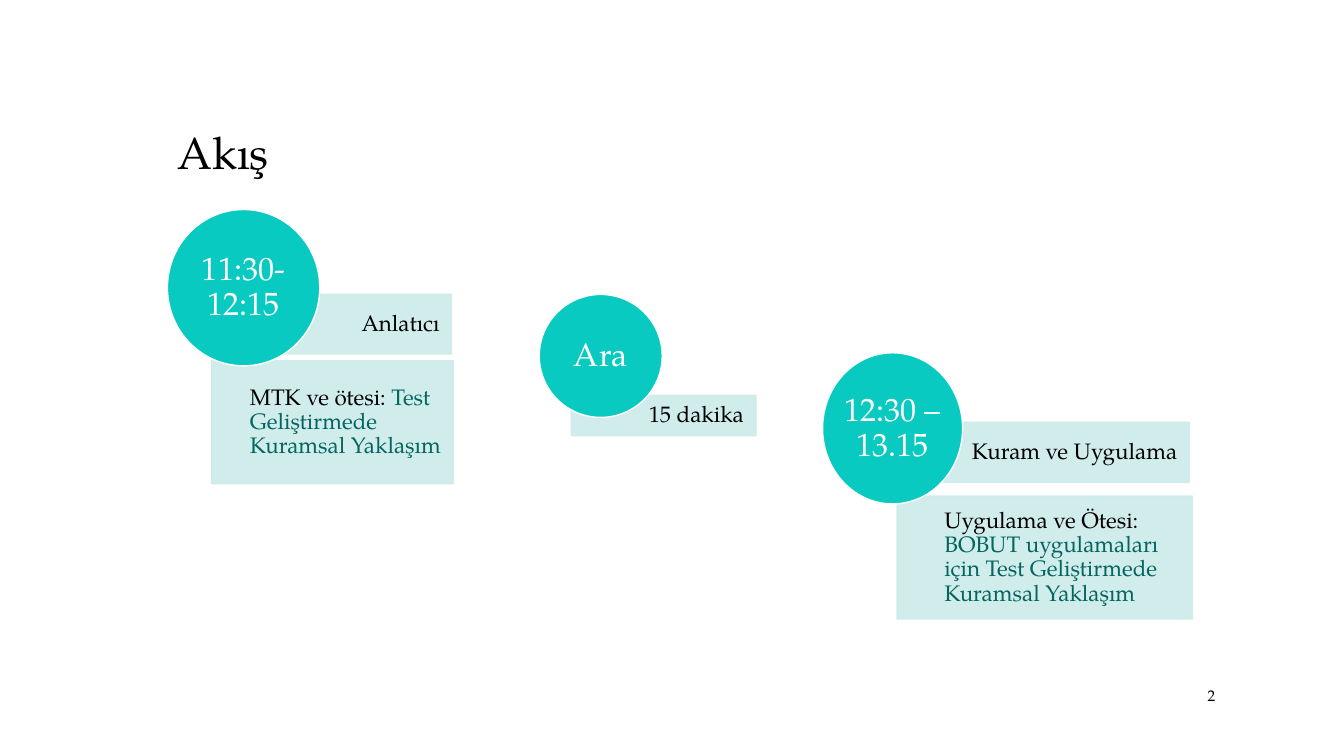
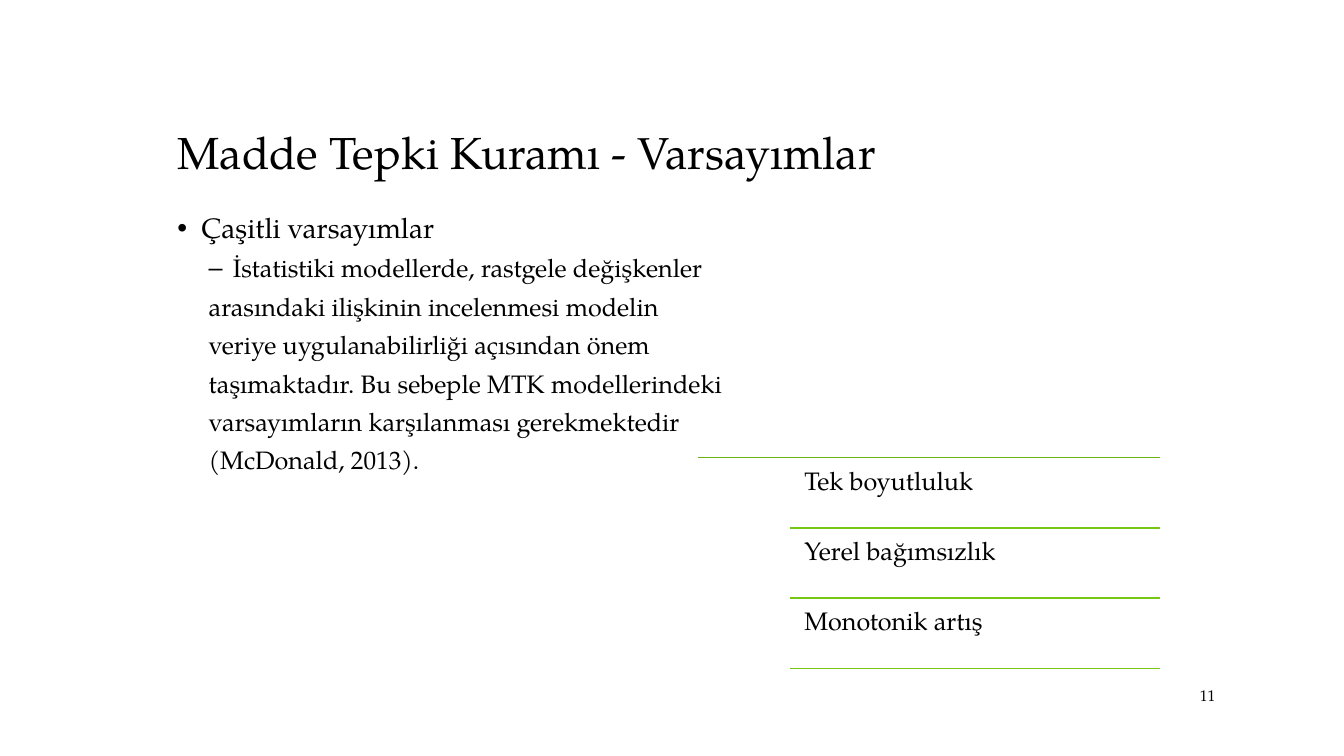
from dataclasses import dataclass

from lxml import etree
from pptx import Presentation
from pptx import util as u
from pptx.dml import color
from pptx.enum import shapes, text
from pptx.oxml import ns

FONT = "TeX Gyre Pagella"
HUES = {
    "ink": "000000",
    "paper": "FFFFFF",
    "teal": "08CAC1",
    "mint": "CCECE9",
    "deep": "046561",
    "moss": "6BB512",
    "lime": "76C714",
}
LEFT = text.PP_ALIGN.LEFT
RIGHT = text.PP_ALIGN.RIGHT
MID = text.PP_ALIGN.CENTER
Area = tuple[float, float, float, float]


@dataclass
class Box:
    area: Area
    pad: float
    lead: str
    tail: str = ""


@dataclass
class Stop:
    time: str
    disc: Area
    boxes: list[Box]


@dataclass
class Rule:
    left: float
    hue: str
    label: str = ""


STOPS = [
    Stop("11:30- 12:15", (4.22, 5.28, 3.84, 3.94), [
        Box((5.33, 9.09, 6.1, 3.1), 0.97, "MTK ve ötesi: ",
            "Test Geliştirmede Kuramsal Yaklaşım"),
        Box((5.49, 7.42, 5.89, 1.5), 0.97, "Anlatıcı"),
    ]),
    Stop("Ara", (13.59, 7.42, 3.1, 3.1), [
        Box((14.4, 9.96, 4.65, 1.02), 0.74, "15 dakika"),
    ]),
    Stop("12:30 – 13.15", (20.73, 8.89, 3.53, 3.81), [
        Box((22.61, 12.5, 7.44, 3.1), 1.19, "Uygulama ve Ötesi: ",
            "BOBUT uygulamaları için Test Geliştirmede Kuramsal Yaklaşım"),
        Box((22.63, 10.64, 7.34, 1.52), 1.19, "Kuram ve Uygulama"),
    ]),
]
NOTES = [
    "İstatistiki modellerde, rastgele değişkenler",
    "arasındaki ilişkinin incelenmesi modelin",
    "veriye uygulanabilirliği açısından önem",
    "taşımaktadır. Bu sebeple MTK modellerindeki",
    "varsayımların karşılanması gerekmektedir",
    "(McDonald, 2013).",
]
RULES = [
    Rule(17.6, "moss", "Tek boyutluluk"),
    Rule(19.91, "lime", "Yerel bağımsızlık"),
    Rule(19.91, "lime", "Monotonik artış"),
    Rule(19.91, "lime"),
]
RULE_TOP, RULE_STEP, RULE_END = 11.53, 1.77, 29.24


def rgb(hue: str) -> color.RGBColor:
    return color.RGBColor.from_string(HUES[hue])


def cms(area: Area) -> list[u.Cm]:
    return [u.Cm(n) for n in area]


def place(item, area: Area) -> None:
    item.left, item.top, item.width, item.height = cms(area)


def style(para, size: float, hue: str = "ink", align=LEFT, gap: float = 0.9) -> None:
    para.alignment = align
    para.line_spacing = gap
    para.font.name = FONT
    para.font.size = u.Pt(size)
    para.font.color.rgb = rgb(hue)


def frame(item, pads: Area, anchor):
    tf = item.text_frame
    tf.word_wrap = True
    tf.auto_size = text.MSO_AUTO_SIZE.NONE
    tf.vertical_anchor = anchor
    tf.margin_left, tf.margin_top, tf.margin_right, tf.margin_bottom = cms(pads)
    return tf


def fade(item, share: int) -> None:
    for tone in item._element.spPr.iter(ns.qn("a:srgbClr")):
        etree.SubElement(tone, ns.qn("a:alpha"), val=str(share * 1000))


def solid(slide, kind, area: Area, fill: str, edge: str):
    item = slide.shapes.add_shape(kind, *cms(area))
    item.shadow.inherit = False
    item.fill.solid()
    item.fill.fore_color.rgb = rgb(fill)
    item.line.color.rgb = rgb(edge)
    item.line.width = u.Pt(1)
    return item


def add_box(slide, box: Box) -> None:
    item = solid(slide, shapes.MSO_SHAPE.RECTANGLE, box.area, "mint", "mint")
    fade(item, 90)
    tf = frame(item, (box.pad, 0.3, 0.3, 0.3), text.MSO_ANCHOR.MIDDLE)
    para = tf.paragraphs[0]
    para.add_run().text = box.lead
    style(para, 16, align=LEFT if box.tail else RIGHT)
    if box.tail:
        run = para.add_run()
        run.text = box.tail
        run.font.color.rgb = rgb("deep")


def add_stop(slide, stop: Stop) -> None:
    for box in stop.boxes:
        add_box(slide, box)
    disc = solid(slide, shapes.MSO_SHAPE.OVAL, stop.disc, "teal", "paper")
    tf = frame(disc, (0, 0, 0, 0), text.MSO_ANCHOR.MIDDLE)
    tf.text = stop.time
    style(tf.paragraphs[0], 23, "paper", MID)


def add_label(slide, words: str, area: Area, pads: Area, size: float, anchor, align, gap: float) -> None:
    item = slide.shapes.add_textbox(*cms(area))
    tf = frame(item, pads, anchor)
    tf.text = words
    style(tf.paragraphs[0], size, align=align, gap=gap)


def add_rule(slide, rule: Rule, top: float) -> None:
    line = slide.shapes.add_connector(
        shapes.MSO_CONNECTOR.STRAIGHT, *cms((rule.left, top, RULE_END, top)))
    line.line.color.rgb = rgb(rule.hue)
    line.line.width = u.Pt(1)
    etree.SubElement(line._element.spPr, ns.qn("a:effectLst"))
    if rule.label:
        add_label(slide, rule.label, (20.09, top + 0.09, 9.15, 1.68),
                  (0.18, 0.18, 0.18, 0.18), 18, text.MSO_ANCHOR.TOP, LEFT, 0.9)


def add_item(para, words: str, size: float, left: float, hang: float, mark: str, space: float) -> None:
    para.text = words
    props = para._p.get_or_add_pPr()
    props.set("marL", str(u.Cm(left)))
    props.set("indent", str(u.Cm(-hang)))
    if mark:
        etree.SubElement(props, ns.qn("a:buChar"), char=mark)
    else:
        etree.SubElement(props, ns.qn("a:buNone"))
    para.space_before = u.Pt(space)
    style(para, size)


def new_slide(deck, layout: int, title: str, number: int):
    slide = deck.slides.add_slide(deck.slide_layouts[layout])
    head = slide.shapes.title
    place(head, (4.22, 1.47, 26.67, 3.18))
    tf = frame(head, (0.25, 0.13, 0.25, 0.13), text.MSO_ANCHOR.BOTTOM)
    tf.text = title
    style(tf.paragraphs[0], 32)
    add_label(slide, str(number), (28.14, 17.15, 2.74, 0.76),
              (0.25, 0.13, 0.25, 0.13), 11, text.MSO_ANCHOR.MIDDLE, RIGHT, 1.0)
    return slide


def flow(deck) -> None:
    slide = new_slide(deck, 5, "Akış", 2)
    for stop in STOPS:
        add_stop(slide, stop)


def theory(deck) -> None:
    slide = new_slide(deck, 1, "Madde Tepki Kuramı - Varsayımlar", 11)
    body = slide.placeholders[1]
    place(body, (4.22, 5.28, 26.67, 11.63))
    tf = frame(body, (0.25, 0.13, 0.25, 0.13), text.MSO_ANCHOR.TOP)
    add_item(tf.paragraphs[0], "Çaşitli varsayımlar", 20, 0.61, 0.61, "•", 0)
    for i, note in enumerate(NOTES):
        para = tf.add_paragraph()
        para.level = 1
        left, hang, mark = (0.79, 0, "") if i else (1.4, 0.61, "–")
        add_item(para, note, 18, left, hang, mark, 8)
    for i, rule in enumerate(RULES):
        add_rule(slide, rule, RULE_TOP + i * RULE_STEP)


def main() -> None:
    deck = Presentation()
    deck.slide_width, deck.slide_height = u.Cm(33.87), u.Cm(19.05)
    flow(deck)
    theory(deck)
    deck.save("out.pptx")


if __name__ == "__main__":
    main()
